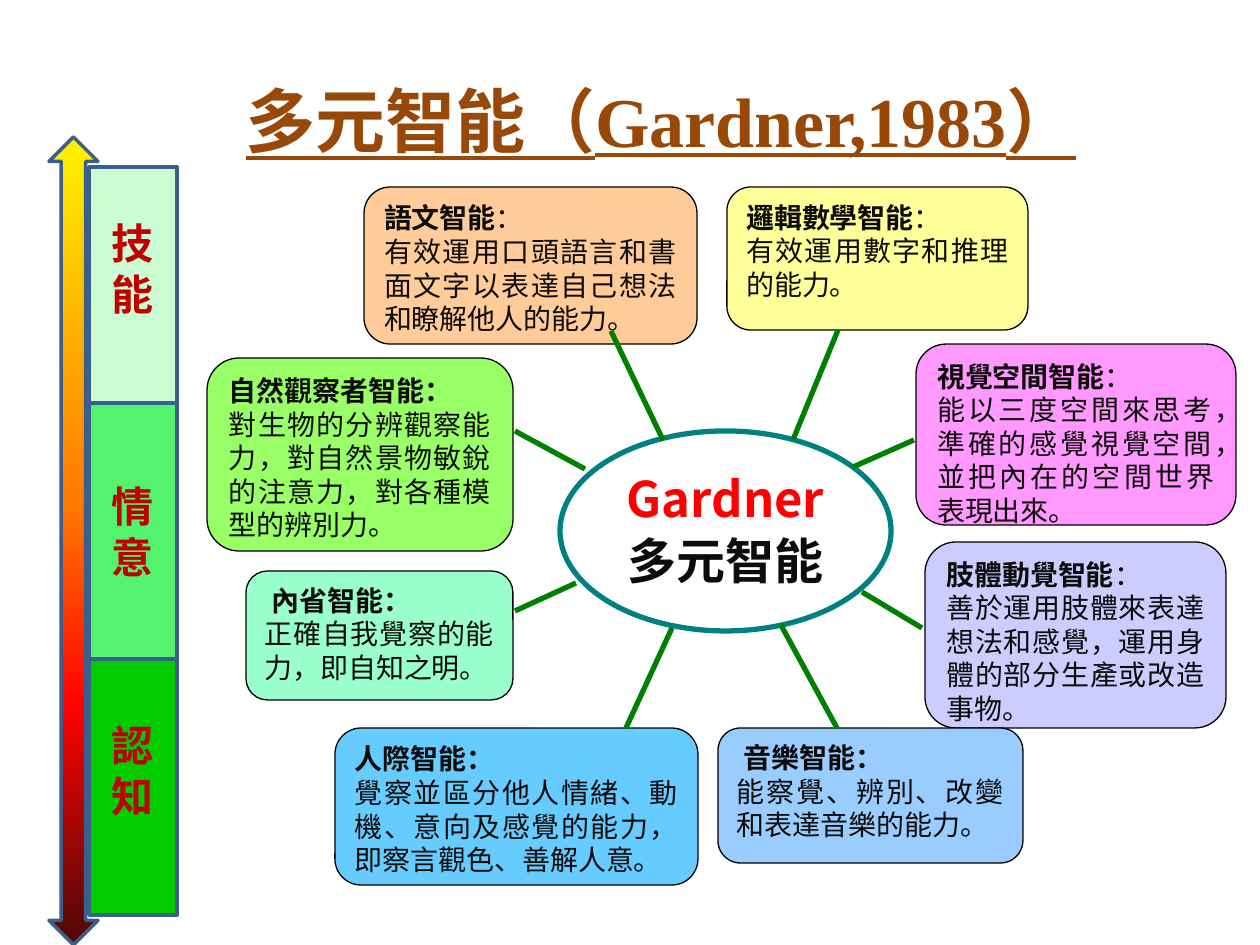
from lxml import etree
from pptx import Presentation
from pptx.dml.color import RGBColor
from pptx.enum.shapes import MSO_CONNECTOR, MSO_SHAPE
from pptx.enum.text import MSO_ANCHOR, PP_ALIGN
from pptx.oxml.ns import qn
from pptx.util import Pt

PX = 914400 / 126
LINE = MSO_CONNECTOR.STRAIGHT
TOP, MIDDLE = MSO_ANCHOR.TOP, MSO_ANCHOR.MIDDLE
CENTER, JUSTIFY = PP_ALIGN.CENTER, PP_ALIGN.JUSTIFY
SERIF, SANS, SANS_TC = "Times New Roman", "Noto Sans CJK SC", "Noto Sans CJK TC"

COLORS = {
    "white": "FFFFFF", "black": "000000", "ink": "0D0C0B", "red": "FF0000",
    "teal": "008080", "spoke": "008000", "frame": "3A5F8C", "label": "C00000",
    "title": "984807", "orange": "FFCC99", "lavender": "CCCCFF", "pink": "FF99FF",
    "yellow": "FFFF99", "lime": "99FF66", "mint": "99FFCC", "sky": "66CCFF",
    "blue": "99CCFF", "skill": "CCFCD4", "affect": "53F36E", "cognition": "00CC00",
}


def add_panel(kind, place, fill, line, width, anchor):
    """Add a filled, outlined shape placed in px."""
    panel = page.shapes.add_shape(kind, *[round(v * PX) for v in place])
    panel.shadow.inherit = False
    panel.fill.solid()
    panel.fill.fore_color.rgb = RGBColor.from_string(COLORS[fill])
    panel.line.color.rgb = RGBColor.from_string(COLORS[line])
    panel.line.width = Pt(width)
    panel.text_frame.word_wrap = True
    panel.text_frame.vertical_anchor = anchor
    return panel


def add_span(para, text, size, font, color, bold=True):
    span = para.add_run()
    span.text = text
    span.font.size = Pt(size)
    span.font.name = font
    span.font.bold = bold
    span.font.color.rgb = RGBColor.from_string(COLORS[color])
    east_asian = etree.SubElement(span.font._element, qn("a:ea"))
    east_asian.set("typeface", SANS_TC)
    return span


deck = Presentation()
deck.slide_width = round(1260 * PX)
deck.slide_height = round(945 * PX)
page = deck.slides.add_slide(deck.slide_layouts[6])

# Centre of the diagram
hub = add_panel(MSO_SHAPE.OVAL, (560, 431, 331, 200), "white", "teal", 3, TOP)
para = hub.text_frame.paragraphs[0]
para.alignment = CENTER
para.line_spacing = Pt(35)
add_span(para, "Gardner", 28, SANS, "red")
add_span(para, "多元智能", 28, SERIF, "ink")

# Eight intelligences: place, fill, heading, colon in regular weight,
# description, heading font, description font, heading indent
intelligences = [
    ((364, 187, 333, 157), "orange", "語文智能", "：",
     "有效運用口頭語言和書面文字以表達自己想法和瞭解他人的能力。", SANS_TC, SANS, 0),
    ((925, 542, 301, 186), "lavender", "肢體動覺智能", "：",
     "善於運用肢體來表達想法和感覺，運用身體的部分生產或改造事物。", SERIF, SERIF, 0),
    ((916, 344, 320, 181), "pink", "視覺空間智能", "：",
     "能以三度空間來思考，準確的感覺視覺空間，並把內在的空間世界表現出來。",
     SERIF, SERIF, 0),
    ((727, 187, 301, 143), "yellow", "邏輯數學智能", "：",
     "有效運用數字和推理的能力。", SANS_TC, SANS, 0),
    ((207, 358, 306, 193), "lime", "自然觀察者智能：", "",
     "對生物的分辨觀察能力，對自然景物敏銳的注意力，對各種模型的辨別力。",
     SERIF, SERIF, 0),
    ((246, 571, 267, 129), "mint", "內省智能：", "",
     "正確自我覺察的能力，即自知之明。", SERIF, SERIF, 7),
    ((335, 728, 363, 157), "sky", "人際智能：", "",
     "覺察並區分他人情緒、動機、意向及感覺的能力，即察言觀色、善解人意。",
     SERIF, SERIF, 0),
    ((718, 728, 305, 135), "blue", "音樂智能：", "",
     "能察覺、辨別、改變和表達音樂的能力。", SERIF, SERIF, 7),
]
for place, fill, heading, colon, description, head_font, body_font, indent in intelligences:
    box = add_panel(MSO_SHAPE.ROUNDED_RECTANGLE, place, fill, "black", 0.75, TOP)
    head = box.text_frame.paragraphs[0]
    body = box.text_frame.add_paragraph()
    for para in (head, body):
        para.alignment = JUSTIFY
        para.line_spacing = Pt(19.2)
    if indent:
        head._p.get_or_add_pPr().set("indent", str(round(indent * PX)))
    add_span(head, heading, 16, head_font, "ink")
    if colon:
        add_span(head, colon, 16, head_font, "ink", False)
    add_span(body, description, 16, body_font, "ink", False)

# Spokes between centre and boxes
spokes = [
    (838, 330, 793, 440), (611, 331, 663, 440), (781, 625, 837, 728),
    (862, 592, 922, 628), (576, 583, 515, 611), (515, 431, 585, 469),
    (853, 467, 914, 440), (672, 628, 626, 728),
]
for ends in spokes:
    spoke = page.shapes.add_connector(LINE, *[round(v * PX) for v in ends])
    spoke.line.color.rgb = RGBColor.from_string(COLORS["spoke"])
    spoke.line.width = Pt(3)
    etree.SubElement(spoke._element.spPr, qn("a:effectLst"))

# Column of learning domains: text, top, height, fill, bottom inset
domains = [
    ("認知", 659, 256, "cognition", 40),
    ("情意", 403, 256, "affect", 6),
    ("技能", 167, 236, "skill", 40),
]
for text, top, height, fill, inset in domains:
    domain = add_panel(MSO_SHAPE.RECTANGLE, (89, top, 88, height), fill, "frame", 2, MIDDLE)
    domain.text_frame.margin_bottom = round(inset * PX)
    para = domain.text_frame.paragraphs[0]
    para.alignment = CENTER
    para.line_spacing = Pt(28.8)
    add_span(para, text, 24, "Calibri", "label")

# Gradient arrow beside the column
arrow = add_panel(MSO_SHAPE.UP_DOWN_ARROW, (49, 137, 49, 808), "white", "frame", 2, MIDDLE)
arrow.fill.gradient()
arrow.fill.gradient_angle = 270
stops = arrow._element.spPr.find(".//" + qn("a:gsLst"))
for stop in list(stops):
    stops.remove(stop)
for percent, color in [(0, "FFF200"), (45, "FF7A00"), (70, "FF0300"), (100, "4D0808")]:
    stop = etree.SubElement(stops, qn("a:gs"), pos=str(percent * 1000))
    etree.SubElement(stop, qn("a:srgbClr"), val=color)

# Title
title = page.shapes.add_textbox(*[round(v * PX) for v in (94, 55, 1134, 129)])
title.text_frame.word_wrap = True
title.text_frame.vertical_anchor = MIDDLE
para = title.text_frame.paragraphs[0]
para.alignment = CENTER
add_span(para, "多元智能（Gardner,1983）", 40, SERIF, "title").font.underline = True

deck.save("out.pptx")
